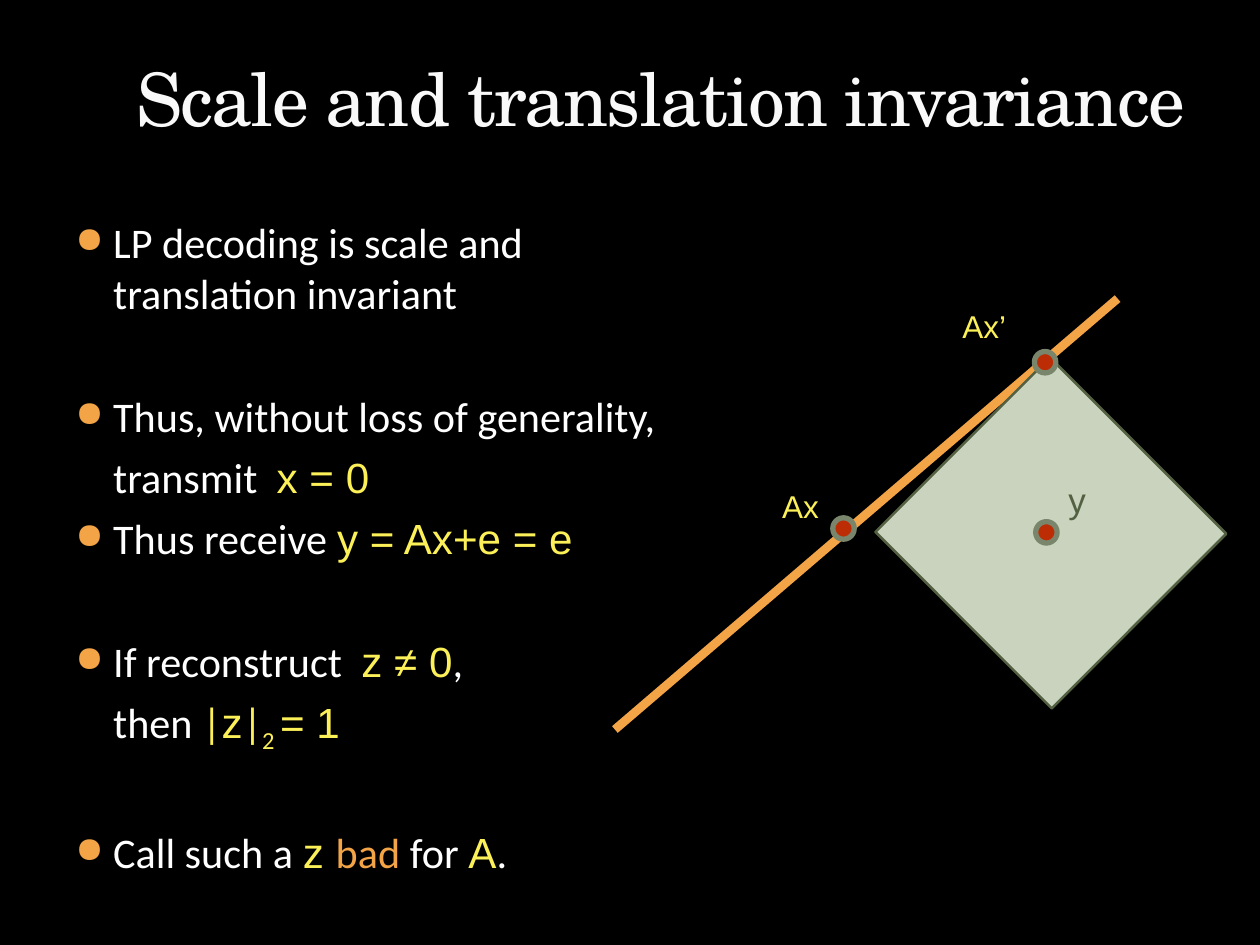
import pptx
import pptx.dml.color
import pptx.enum.shapes
import pptx.enum.text
import pptx.oxml
import pptx.oxml.ns
import pptx.util
from pptx.util import Inches

COLORS = {
    "background": "000000", "title": "F9F9F9", "text": "FFFFFF",
    "math": "FCF059", "accent": "F3A447", "ball": "C9D3BE",
    "ball_edge": "536142", "point": "BD2D05", "point_edge": "7A866C",
}
FONTS = {"text": "Calibri", "accent": "Calibri", "math": "Arial",
         "ball_edge": "Arial", "title": "TeX Gyre Schola"}
NO_SHADOW = f'<a:effectLst {pptx.oxml.ns.nsdecls("a")}/>'


def rgb(color):
    return pptx.dml.color.RGBColor.from_string(COLORS[color])


def add_run(paragraph, text, style, size):
    run = paragraph.add_run()
    run.text = text
    font_format = {"name": FONTS[style], "size": pptx.util.Pt(size)}
    for attribute, value in font_format.items():
        setattr(run.font, attribute, value)
    run.font.color.rgb = rgb(style)
    return run


deck = pptx.Presentation()
deck.slide_width, deck.slide_height = Inches(10), Inches(7.5)
slide = deck.slides.add_slide(deck.slide_layouts[6])
slide.background.fill.solid()
slide.background.fill.fore_color.rgb = rgb("background")
shapes = slide.shapes

# Title
title = shapes.add_textbox(Inches(0.5), Inches(0.25), Inches(9), Inches(0.92)).text_frame
title_format = {"word_wrap": True, "vertical_anchor": pptx.enum.text.MSO_ANCHOR.BOTTOM}
for attribute, value in title_format.items():
    setattr(title, attribute, value)
heading = title.paragraphs[0]
heading.alignment = pptx.enum.text.PP_ALIGN.RIGHT
heading_run = add_run(heading, "Scale and translation invariance", "title", 42)
heading_run.font._element.set("spc", "-100")

# Argument: (bulleted, space before in points, runs)
NEAR, FAR = 6, 41.4
argument = [
    (True, NEAR, [("LP decoding is scale and translation invariant", "text")]),
    (True, FAR, [("Thus, without loss of generality,", "text")]),
    (False, NEAR, [("transmit  ", "text"), ("x = 0", "math")]),
    (True, NEAR, [("Thus receive ", "text"), ("y = Ax+e = e", "math")]),
    (True, FAR, [("If reconstruct  ", "text"), ("z ≠ 0", "math"), (",", "text")]),
    (False, NEAR, [("then ", "text"), ("|", "math"), ("z", "math"), ("|", "math"),
                   ("2 ", "math"), ("= 1", "math")]),
    (True, FAR, [("Call such a ", "text"), ("z ", "math"), ("bad", "accent"),
                 (" for ", "text"), ("A", "math"), (".", "text")]),
]
body = shapes.add_textbox(Inches(0.5), Inches(1.67), Inches(5.08), Inches(5)).text_frame
body.word_wrap = True
for number, (bulleted, space, runs) in enumerate(argument):
    step = body.add_paragraph() if number else body.paragraphs[0]
    step.space_before = pptx.util.Pt(space)
    layout = step._p.get_or_add_pPr()
    layout.set("marL", str(Inches(0.3)))
    layout.set("indent", str(Inches(-0.3) if bulleted else 0))
    if bulleted:
        for bullet in (
            f'<a:buClr {{ns}}><a:srgbClr val="{COLORS["accent"]}"/></a:buClr>',
            '<a:buSzPct {ns} val="85000"/>',
            '<a:buChar {ns} char="●"/>',
        ):
            layout.append(pptx.oxml.parse_xml(bullet.format(ns=pptx.oxml.ns.nsdecls("a"))))
    for text, style in runs:
        run = add_run(step, text, style, 24.1)
        if text in ("|", "2 "):
            run.font.name = FONTS["text"]
        if text == "2 ":
            run.font._element.set("baseline", "-25000")

# Line of codewords
codewords = shapes.add_connector(
    pptx.enum.shapes.MSO_CONNECTOR.STRAIGHT,
    Inches(4.88), Inches(5.79), Inches(8.87), Inches(2.37))
codewords.line.color.rgb = rgb("accent")
codewords.line.width = pptx.util.Pt(5)
codewords._element.spPr.append(pptx.oxml.parse_xml(NO_SHADOW))

# Unit ball around y, then the points y, Ax and Ax’
RECTANGLE = pptx.enum.shapes.MSO_SHAPE.RECTANGLE
OVAL = pptx.enum.shapes.MSO_SHAPE.OVAL
figures = [(RECTANGLE, 7.35, 3.25, 1.98, 1.96, 45, "ball", 1.5)]
for left, top in ((8.22, 4.14), (6.61, 4.11), (8.21, 2.79)):
    figures.append((OVAL, left, top, 0.17, 0.17, 0, "point", 3))
for kind, left, top, width, height, rotation, color, edge in figures:
    figure = shapes.add_shape(kind, Inches(left), Inches(top), Inches(width), Inches(height))
    figure.rotation = rotation
    figure.shadow.inherit = False
    figure.fill.solid()
    figure.fill.fore_color.rgb = rgb(color)
    figure.line.color.rgb = rgb(color + "_edge")
    figure.line.width = pptx.util.Pt(edge)

# Point labels
for text, left, top, width, height, style, size in (
    ("Ax", 6.11, 3.82, 0.52, 0.4, "math", 18),
    ("Ax’", 7.54, 2.39, 0.59, 0.4, "math", 18),
    ("y", 8.38, 3.75, 0.35, 0.44, "ball_edge", 20),
):
    label = shapes.add_textbox(Inches(left), Inches(top), Inches(width), Inches(height))
    label.text_frame.word_wrap = False
    add_run(label.text_frame.paragraphs[0], text, style, size)

deck.save("out.pptx")
